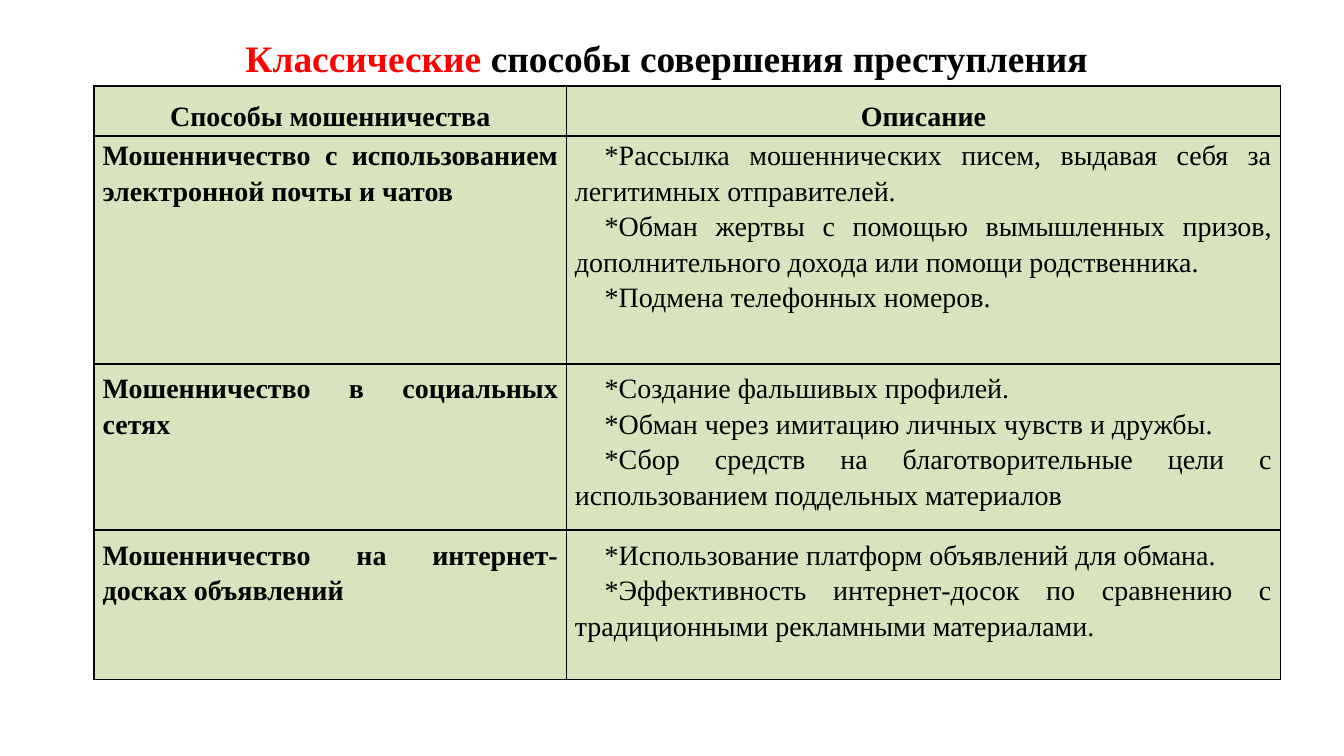
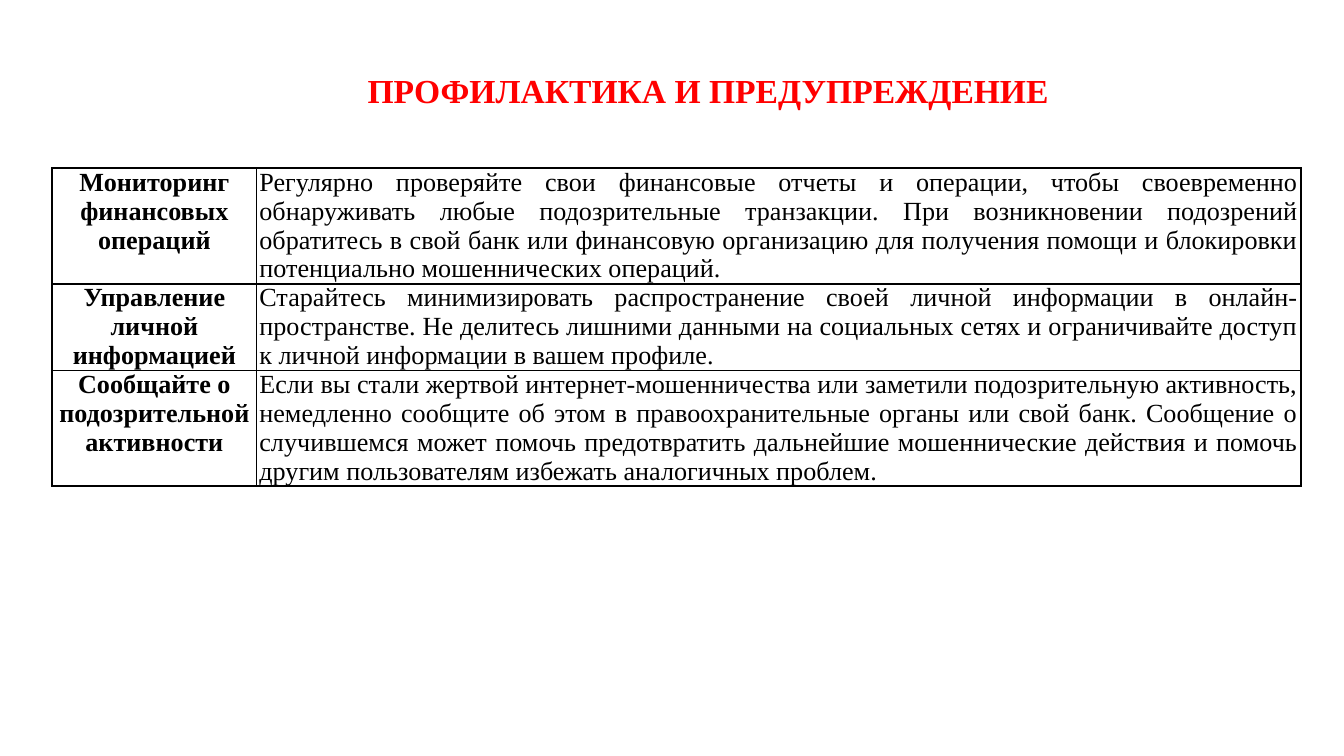
from pptx import Presentation
from pptx.dml.color import RGBColor
from pptx.enum.text import MSO_ANCHOR as Anchor, MSO_AUTO_SIZE as AutoSize, PP_ALIGN as Align
from pptx.oxml import parse_xml
from pptx.oxml.ns import nsdecls
from pptx.util import Pt

RED, BLACK, GREEN = "FF0000", "000000", "D7E4BD"
TITLE_ONLY = 5


def color(value):
    return RGBColor.from_string(value)


class Deck:
    """Holds the shared style and the current slide."""

    font_name = "Times New Roman"

    def __init__(self, width, height):
        self.presentation = Presentation()
        self.presentation.slide_width = Pt(width)
        self.presentation.slide_height = Pt(height)
        self.slide = None

    def add_slide(self):
        layout = self.presentation.slide_layouts[TITLE_ONLY]
        self.slide = self.presentation.slides.add_slide(layout)

    def style(self, paragraph, size, bold, align, spacing=1.0):
        paragraph.alignment = align
        paragraph.line_spacing = spacing
        paragraph.space_before = paragraph.space_after = Pt(0)
        font = paragraph.font
        font.name, font.size, font.bold = self.font_name, Pt(size), bold
        font.color.rgb = color(BLACK)

    def title(self, box, runs, size, align, anchor, inset=7.2):
        shape = self.slide.shapes.title
        shape.left, shape.top, shape.width, shape.height = map(Pt, box)
        frame = shape.text_frame
        frame.auto_size = AutoSize.NONE
        frame.word_wrap = True
        frame.vertical_anchor = anchor
        frame.margin_left = Pt(inset)
        paragraph = frame.paragraphs[0]
        self.style(paragraph, size, True, align)
        for text, run_color in runs:
            run = paragraph.add_run()
            run.text = text
            run.font.color.rgb = color(run_color)

    def table(self, left, top, widths, heights, fill=None):
        table = self.slide.shapes.add_table(
            len(heights), len(widths), Pt(left), Pt(top), Pt(sum(widths)), Pt(sum(heights))
        ).table
        table.first_row = table.horz_banding = False
        for column, width in zip(table.columns, widths):
            column.width = Pt(width)
        for row, height in zip(table.rows, heights):
            row.height = Pt(height)
        for cell in table.iter_cells():
            if fill:
                cell.fill.solid()
                cell.fill.fore_color.rgb = color(fill)
            else:
                cell.fill.background()
            self.borders(cell)
        return table

    def borders(self, cell):
        properties = cell._tc.get_or_add_tcPr()
        for position, side in enumerate(("lnL", "lnR", "lnT", "lnB")):
            properties.insert(position, parse_xml(
                f'<a:{side} {nsdecls("a")} w="{Pt(1)}"><a:solidFill>'
                f'<a:srgbClr val="{BLACK}"/></a:solidFill></a:{side}>'))

    def cell(self, cell, lines, size, bold, align, spacing=1.0, indent=0, margins=(0, 0)):
        cell.margin_left = cell.margin_right = Pt(margins[0])
        cell.margin_top = cell.margin_bottom = Pt(margins[1])
        cell.text = "\n".join(lines)
        for paragraph in cell.text_frame.paragraphs:
            self.style(paragraph, size, bold, align, spacing)
            if indent:
                properties = paragraph._p.get_or_add_pPr()
                properties.set("marL", "0")
                properties.set("indent", str(Pt(indent)))


FRAUD_HEADERS = ("Способы мошенничества", "Описание")
FRAUD_METHODS = [
    ("Мошенничество с использованием электронной почты и чатов", [
        "*Рассылка мошеннических писем, выдавая себя за легитимных отправителей.",
        "*Обман жертвы с помощью вымышленных призов, дополнительного дохода или помощи родственника.",
        "*Подмена телефонных номеров.",
    ]),
    ("Мошенничество в социальных сетях", [
        "*Создание фальшивых профилей.",
        "*Обман через имитацию личных чувств и дружбы.",
        "*Сбор средств на благотворительные цели с использованием поддельных материалов",
    ]),
    ("Мошенничество на интернет-досках объявлений", [
        "*Использование платформ объявлений для обмана.",
        "*Эффективность интернет-досок по сравнению с традиционными рекламными материалами.",
    ]),
]
PREVENTION = [
    ("Мониторинг финансовых операций",
     "Регулярно проверяйте свои финансовые отчеты и операции, чтобы своевременно обнаруживать "
     "любые подозрительные транзакции. При возникновении подозрений обратитесь в свой банк или "
     "финансовую организацию для получения помощи и блокировки потенциально мошеннических операций."),
    ("Управление личной информацией",
     "Старайтесь минимизировать распространение своей личной информации в онлайн-пространстве. "
     "Не делитесь лишними данными на социальных сетях и ограничивайте доступ к личной информации "
     "в вашем профиле."),
    ("Сообщайте о подозрительной активности",
     "Если вы стали жертвой интернет-мошенничества или заметили подозрительную активность, "
     "немедленно сообщите об этом в правоохранительные органы или свой банк. Сообщение о "
     "случившемся может помочь предотвратить дальнейшие мошеннические действия и помочь другим "
     "пользователям избежать аналогичных проблем."),
]


def add_fraud_slide(deck):
    deck.add_slide()
    deck.title((56, 15, 655, 32),
               [("Классические ", RED), ("способы совершения преступления", BLACK)],
               20, Align.LEFT, Anchor.MIDDLE, inset=75.5)
    table = deck.table(50.5, 46, (253, 382.5), (27, 122, 89, 80), GREEN)

    # Header row
    for column, header in enumerate(FRAUD_HEADERS):
        deck.cell(table.cell(0, column), [header], 15, True, Align.CENTER, 1.5, margins=(4.5, 0))

    # Methods and their descriptions
    for row, (method, descriptions) in enumerate(FRAUD_METHODS, 1):
        margins = (4.5, 0 if row == 1 else 3)
        deck.cell(table.cell(row, 0), [method], 15, True, Align.JUSTIFY, 1.15, margins=margins)
        deck.cell(table.cell(row, 1), descriptions, 15, False, Align.JUSTIFY, 1.15, 16, margins)


def add_prevention_slide(deck):
    deck.add_slide()
    deck.title((140.5, 11.5, 478, 51), [("ПРОФИЛАКТИКА И ПРЕДУПРЕЖДЕНИЕ", RED)],
               18, Align.CENTER, Anchor.BOTTOM)
    table = deck.table(28, 90, (109.5, 559.5), (62, 46.5, 62))
    for row, (measure, advice) in enumerate(PREVENTION):
        deck.cell(table.cell(row, 0), [measure], 14, True, Align.CENTER, margins=(1.5, 0))
        deck.cell(table.cell(row, 1), [advice], 14, False, Align.JUSTIFY, margins=(1.5, 0))


def main():
    deck = Deck(720, 405)
    add_fraud_slide(deck)
    add_prevention_slide(deck)
    deck.presentation.save("out.pptx")


if __name__ == "__main__":
    main()
